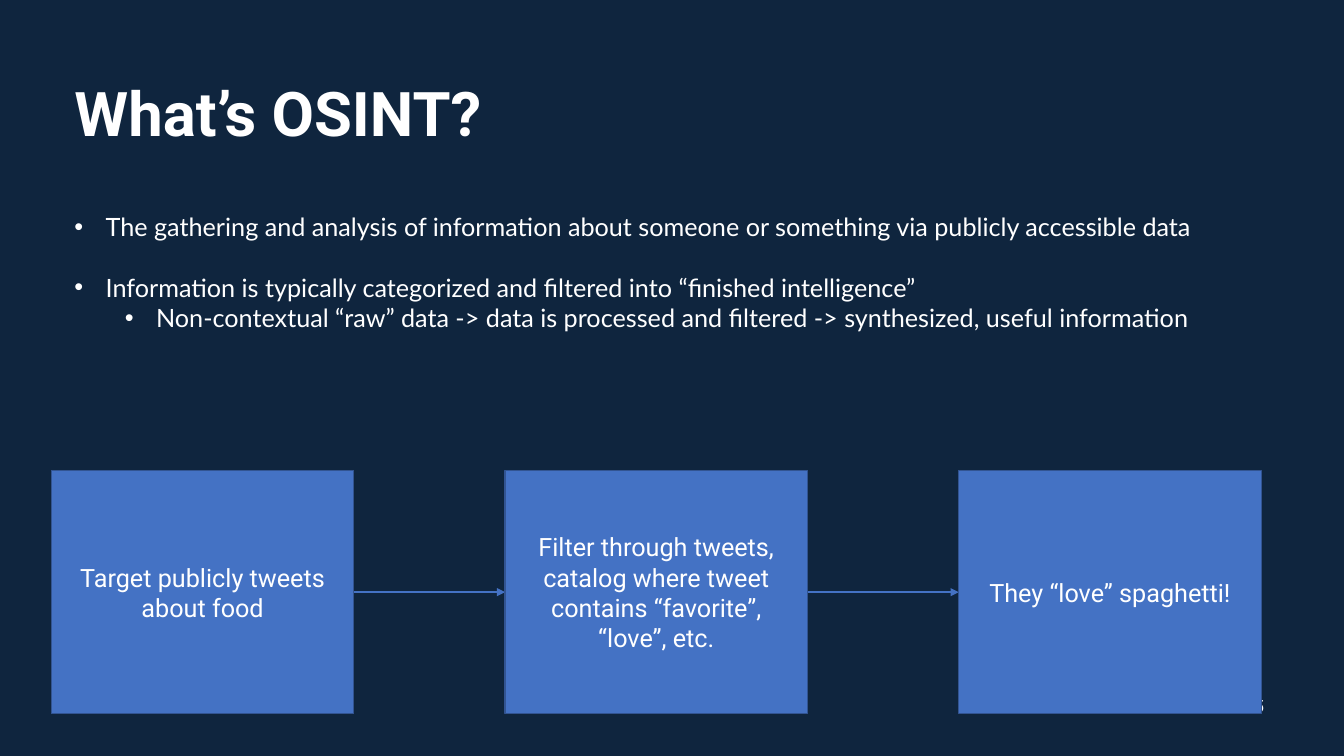
from lxml import etree
from pptx import Presentation
from pptx.dml.color import RGBColor
from pptx.enum.shapes import MSO_CONNECTOR as CONN, MSO_SHAPE as SHAPE
from pptx.enum.text import MSO_ANCHOR as ANCHOR, PP_ALIGN as ALIGN
from pptx.oxml.ns import qn
from pptx.util import Inches, Pt

NAVY = RGBColor(0x0F, 0x25, 0x3E)
WHITE = RGBColor(0xFF, 0xFF, 0xFF)
BLUE = RGBColor(0x44, 0x72, 0xC4)
EDGE = RGBColor(0x32, 0x54, 0x91)

# text, left indent in inches, space before in points
BULLETS = [
    ("The gathering and analysis of information about someone or something "
     "via publicly accessible data", 0.31, 0),
    ("Information is typically categorized and filtered into "
     "“finished intelligence”", 0.31, 21.6),
    ("Non-contextual “raw” data -> data is processed and filtered -> "
     "synthesized, useful information", 0.81, 0),
]
STEPS = [
    "Target publicly tweets about food",
    "Filter through tweets, catalog where tweet contains “favorite”, “love”, etc.",
    "They “love” spaghetti!",
]


def write(p, text, size, name="Roboto", bold=False):
    r = p.add_run()
    r.text = text
    formats = {"size": Pt(size), "name": name, "bold": bold}
    for key, value in formats.items():
        setattr(r.font, key, value)
    r.font.color.rgb = WHITE


def add_text_frame(s, box, anchor):
    tf = s.shapes.add_textbox(*map(Inches, box)).text_frame
    tf.word_wrap = True
    tf.vertical_anchor = anchor
    return tf


def add_title(s, box):
    p = add_text_frame(s, box, ANCHOR.MIDDLE).paragraphs[0]
    p.line_spacing = 0.9
    write(p, "What’s OSINT?", 44, bold=True)


def add_slide_number(s, box):
    p = add_text_frame(s, box, ANCHOR.MIDDLE).paragraphs[0]
    p.alignment = ALIGN.CENTER
    write(p, "5", 12)


def set_bullet(p, indent, hanging=0.31):
    pPr = p._p.get_or_add_pPr()
    pPr.set("marL", str(Inches(indent)))
    pPr.set("indent", str(-Inches(hanging)))
    etree.SubElement(pPr, qn("a:buFont")).set("typeface", "Arial")
    etree.SubElement(pPr, qn("a:buChar")).set("char", "•")


def add_bullets(s, box):
    tf = add_text_frame(s, box, ANCHOR.TOP)
    for i, (text, indent, before) in enumerate(BULLETS):
        p = tf.add_paragraph() if i else tf.paragraphs[0]
        p.level = int(indent > 0.5)
        p.space_before = Pt(before)
        set_bullet(p, indent)
        write(p, text, 18, "Lato")


def add_step(s, box, text):
    sp = s.shapes.add_shape(SHAPE.RECTANGLE, *map(Inches, box))
    sp.shadow.inherit = False
    sp.fill.solid()
    sp.fill.fore_color.rgb = BLUE
    sp.line.color.rgb = EDGE
    sp.line.width = Pt(1)
    tf = sp.text_frame
    tf.word_wrap = True
    tf.vertical_anchor = ANCHOR.MIDDLE
    p = tf.paragraphs[0]
    p.alignment = ALIGN.CENTER
    write(p, text, 18)


def add_arrow(s, x1, x2, y):
    line = s.shapes.add_connector(CONN.STRAIGHT, *map(Inches, (x1, y, x2, y)))
    line.line.color.rgb = BLUE
    line.line.width = Pt(1.5)
    etree.SubElement(line.line._get_or_add_ln(), qn("a:tailEnd")).set("type", "triangle")
    etree.SubElement(line._element.spPr, qn("a:effectLst"))


def add_process(s, box, gap=1.5):
    """Equal boxes across the given area, joined by arrows."""
    left, top, width, height = box
    step_w = (width - gap * (len(STEPS) - 1)) / len(STEPS)
    for i, text in enumerate(STEPS):
        x = left + i * (step_w + gap)
        if i:
            add_arrow(s, x - gap, x, top + height / 2)
        add_step(s, (x, top, step_w, height), text)


def main():
    prs = Presentation()
    prs.slide_width, prs.slide_height = Inches(13.33), Inches(7.5)
    s = prs.slides.add_slide(prs.slide_layouts[6])
    s.background.fill.solid()
    s.background.fill.fore_color.rgb = NAVY
    add_title(s, (0.64, 0.55, 11.5, 1.22))
    add_slide_number(s, (12.24, 6.8, 0.5, 0.4))
    add_bullets(s, (0.64, 2.05, 11.95, 1.62))
    add_process(s, (0.51, 4.67, 12, 2.41))
    prs.save("out.pptx")


if __name__ == "__main__":
    main()
